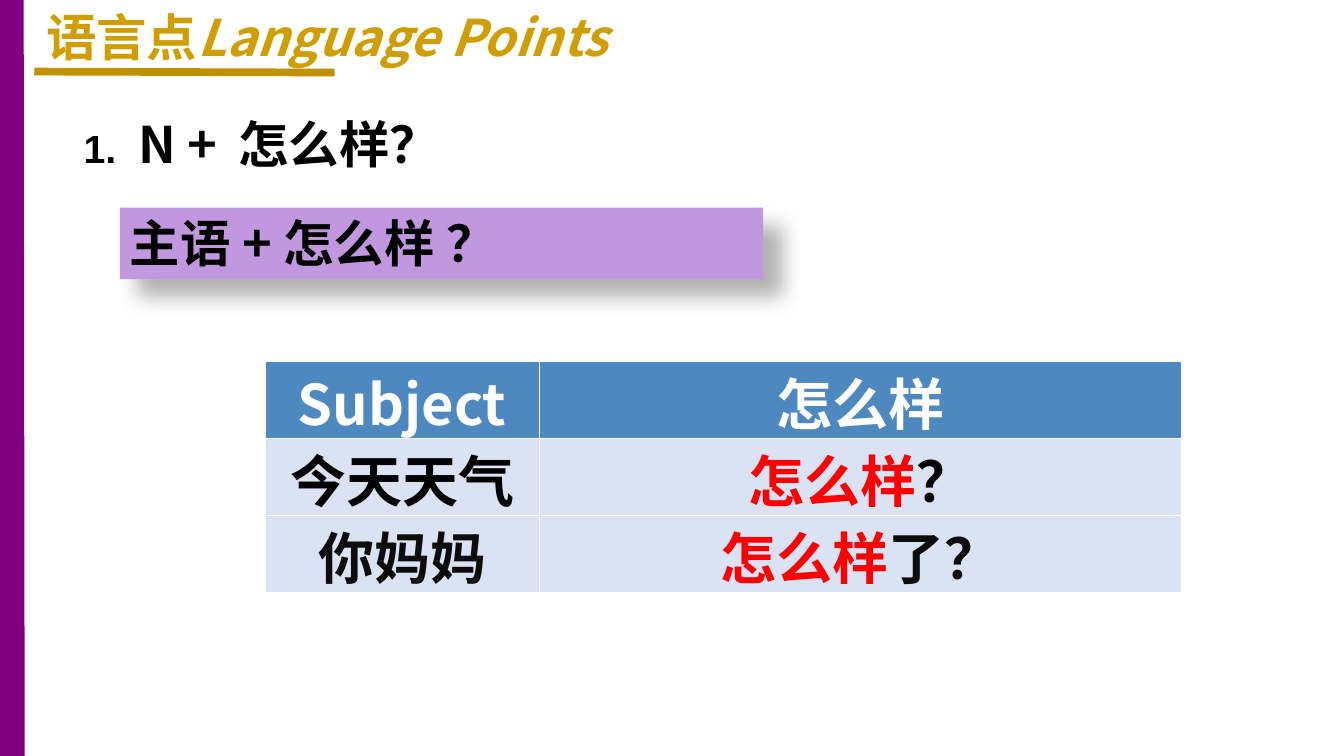
from dataclasses import dataclass

from lxml import etree
from pptx import Presentation
from pptx.dml.color import RGBColor
from pptx.enum.shapes import MSO_CONNECTOR, MSO_SHAPE
from pptx.enum.text import MSO_ANCHOR, PP_ALIGN
from pptx.oxml.ns import qn
from pptx.util import Pt

PX = 9144  # 100 px to the inch
RECT, LINE = MSO_SHAPE.RECTANGLE, MSO_CONNECTOR.STRAIGHT
TOP, MIDDLE = MSO_ANCHOR.TOP, MSO_ANCHOR.MIDDLE
LEFT, CENTER = PP_ALIGN.LEFT, PP_ALIGN.CENTER


@dataclass(frozen=True)
class Theme:
    font: str = "Noto Sans CJK SC"
    latin: str = "Arial"
    small: int = 28
    body: int = 36
    cell: int = 40
    black: str = "000000"
    soft: str = "0D0D0D"
    white: str = "FFFFFF"
    red: str = "FF0000"
    gold: str = "D09E00"
    rule: str = "BF9000"
    purple: str = "800080"
    lilac: str = "C198E0"
    head: str = "2E75B6"
    pale: str = "DAE3F3"


T = Theme()


def px(*vals):
    return [v * PX for v in vals]


def rgb(code):
    return RGBColor.from_string(code)


def add_xml(parent, tag, **attrs):
    return etree.SubElement(parent, qn(tag), {k: str(v) for k, v in attrs.items()})


def add_run(para, text, color=T.black, size=T.body, font=T.font, italic=None, gap=0):
    """Add one bold run; gap is extra spacing after each letter, in points."""
    run = para.add_run()
    run.text = text
    face = run.font
    face.size, face.bold, face.italic = Pt(size), True, italic
    face.color.rgb = rgb(color)
    face.name = font
    props = run._r.get_or_add_rPr()
    add_xml(props, "a:ea", typeface=font)
    if gap:
        props.set("spc", str(gap * 100))


def set_frame(frame, wrap=True):
    """Ready a frame for one line and return its paragraph."""
    frame.word_wrap = wrap
    frame.vertical_anchor = TOP
    frame.margin_right = 0
    para = frame.paragraphs[0]
    para.alignment = LEFT
    return para


def add_line(slide, start, end, color, width):
    line = slide.shapes.add_connector(LINE, *px(*start, *end))
    line.line.color.rgb = rgb(color)
    line.line.width = Pt(width)
    add_xml(line._element.spPr, "a:effectLst")


def add_title(slide, x, y, w, h):
    add_line(slide, (x - 2, y + 70), (x + 296, y + 71), T.rule, 5.5)
    box = slide.shapes.add_textbox(*px(x, y, w, h))
    para = set_frame(box.text_frame, False)
    add_run(para, "语言点", T.gold)
    add_run(para, "Language Points", T.gold, italic=True)


def add_point(slide, x, y, w, h):
    box = slide.shapes.add_textbox(*px(x, y, w, h))
    para = set_frame(box.text_frame)
    add_run(para, "1.", size=T.small, font=T.latin)
    add_run(para, " ", size=T.small, font=T.latin, gap=8)
    add_run(para, "N +")
    add_run(para, " ", gap=7)
    add_run(para, "怎么样？")


def add_banner(slide, x, y, w, h):
    bar = slide.shapes.add_shape(RECT, *px(x, y, w, h))
    bar.fill.solid()
    bar.fill.fore_color.rgb = rgb(T.lilac)
    bar.line.fill.background()
    effects = add_xml(bar._element.spPr, "a:effectLst")
    shade = add_xml(effects, "a:outerShdw", blurRad=Pt(15), dist=Pt(18),
                    dir=45 * 60000, algn="tl", rotWithShape=0)
    tint = add_xml(shade, "a:srgbClr", val=T.black)
    add_xml(tint, "a:alpha", val=30000)
    add_run(set_frame(bar.text_frame), "主语 + 怎么样 ？")


def style_cell(cell, fill, alpha=None):
    cell.fill.solid()
    cell.fill.fore_color.rgb = rgb(fill)
    cell.vertical_anchor = MIDDLE
    cell.margin_top, cell.margin_bottom = px(12, 0)
    props = cell._tc.get_or_add_tcPr()
    if alpha:
        add_xml(props.find(".//" + qn("a:srgbClr")), "a:alpha", val=alpha * 1000)
    for spot, side in enumerate("LRTB"):
        edge = add_xml(props, "a:ln" + side, w=Pt(1))
        add_xml(add_xml(edge, "a:solidFill"), "a:srgbClr", val=T.white)
        props.insert(spot, edge)


def add_grid(slide, x, y, w, h):
    rows = (
        ([("Subject", T.white)], [("怎么样", T.white)]),
        ([("今天天气", T.black)], [("怎么样", T.red), ("？", T.black)]),
        ([("你妈妈", T.soft)], [("怎么样", T.red), ("了？", T.soft)]),
    )
    first = 272
    table = slide.shapes.add_table(len(rows), 2, *px(x, y, w, h)).table
    for col, width in zip(table.columns, px(first, w - first)):
        col.width = width
    for r, row in enumerate(rows):
        table.rows[r].height = h * PX // len(rows)
        for c, runs in enumerate(row):
            cell = table.cell(r, c)
            if r:
                style_cell(cell, T.pale)
            else:
                style_cell(cell, T.head, 85)
            para = cell.text_frame.paragraphs[0]
            para.alignment = CENTER
            para.line_spacing = 0.8
            for text, color in runs:
                add_run(para, text, color, T.cell)


def main():
    deck = Presentation()
    deck.slide_width, deck.slide_height = px(1333, 750)
    slide = deck.slides.add_slide(deck.slide_layouts[6])
    add_line(slide, (12, 750), (11, 0), T.purple, 18)
    add_title(slide, 36, 1, 593, 71)
    add_point(slide, 73, 107, 909, 71)
    add_banner(slide, 119, 206, 638, 71)
    add_grid(slide, 263, 359, 909, 229)
    deck.save("out.pptx")


if __name__ == "__main__":
    main()
